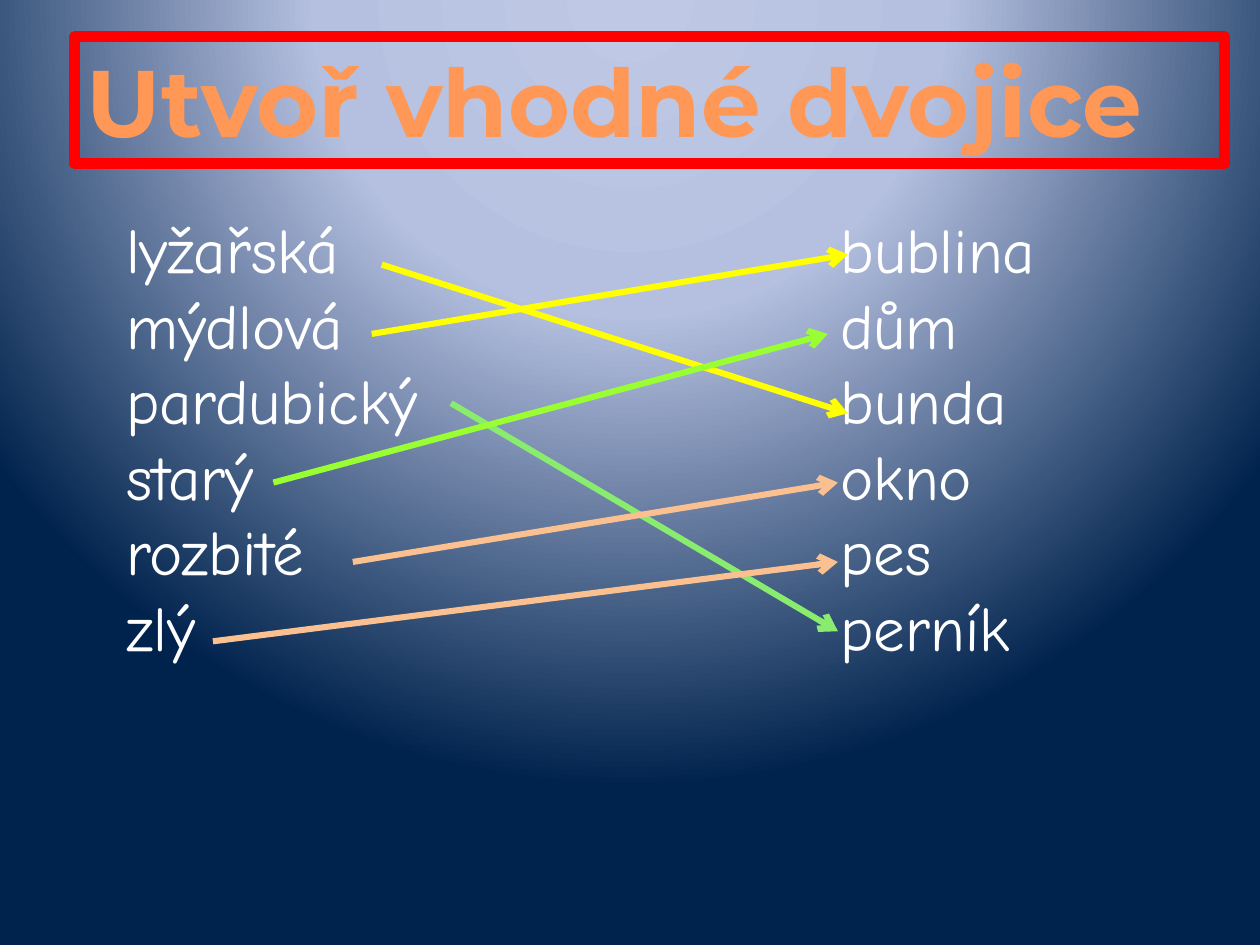
from lxml import etree
from pptx import Presentation
from pptx.dml.color import RGBColor as RGB
from pptx.enum.shapes import MSO_CONNECTOR as Conn
from pptx.enum.text import MSO_ANCHOR as Anchor, MSO_AUTO_SIZE as Fit, PP_ALIGN as Align
from pptx.oxml import parse_xml
from pptx.oxml.ns import nsdecls, qn
from pptx.util import Inches, Pt

# Content
TITLE = "Utvoř vhodné dvojice"
LEFT = ["lyžařská", "mýdlová", "pardubický", "starý", "rozbité", "zlý"]
RIGHT = ["bublina", "dům", "bunda", "okno", "pes", "perník"]
# Arrows: colour, start, end
ARROWS = [
    ("yellow", (3.03, 2.1), (6.73, 3.28)),
    ("yellow", (2.95, 2.65), (6.73, 2.02)),
    ("green", (3.58, 3.2), (6.65, 5.01)),
    ("lime", (2.17, 3.83), (6.57, 2.65)),
    ("peach", (2.8, 4.46), (6.65, 3.83)),
    ("peach", (1.69, 5.09), (6.65, 4.46)),
]
COLORS = {
    "title": "FF9856", "frame": "FF0000", "text": "FFFFFF",
    "yellow": "FFFF00", "green": "89EC6E", "lime": "99FF33", "peach": "FAC090",
}
GLOW = [(0, "BFC9E5"), (40, "B5C0E0"), (100, "00234D")]

# Layout
EDGE, TOP, ROW, PAD = 0.59, 1.62, 0.61, 0.31
COLS = [(LEFT, EDGE, 3.15), (RIGHT, 6.26, 2.83)]


def color(name):
    return RGB.from_string(COLORS[name])


def place(shape, *box):
    shape.left, shape.top, shape.width, shape.height = map(Inches, box)


def style(para, face, size, name, bold=False):
    font = para.font
    font.name, font.size, font.bold = face, Pt(size), bold
    font.color.rgb = color(name)
    para.alignment = Align.LEFT


def paint(slide):
    stops = "".join(
        f'<a:gs pos="{pos * 1000}"><a:srgbClr val="{tint}"/></a:gs>' for pos, tint in GLOW)
    slide.element.cSld.insert(0, parse_xml(
        f'<p:bg {nsdecls("p", "a")}><p:bgPr><a:gradFill rotWithShape="1">'
        f'<a:gsLst>{stops}</a:gsLst><a:path path="circle">'
        '<a:fillToRect l="50000" t="-80000" r="50000" b="180000"/></a:path>'
        '</a:gradFill><a:effectLst/></p:bgPr></p:bg>'))


def fill_list(body, words):
    frame = body.text_frame
    frame.text = "\n".join(words)
    frame.auto_size, frame.vertical_anchor = Fit.NONE, Anchor.TOP
    for para in frame.paragraphs:
        style(para, "Comic Neue", 36, "text")
        para.space_before = Pt(0)
        props = para._p.get_or_add_pPr()
        props.set("marL", str(Inches(PAD)))
        props.set("indent", "0")
        etree.SubElement(props, qn("a:buNone"))
        # Bullet settings come before the default run settings
        props.append(props.find(qn("a:defRPr")))


def arrow(slide, name, start, end):
    line = slide.shapes.add_connector(Conn.STRAIGHT, *map(Inches, start + end))
    line.line.color.rgb = color(name)
    line.line.width = Pt(3.5)
    etree.SubElement(line.line._get_or_add_ln(), qn("a:tailEnd"), type="arrow")
    etree.SubElement(line._element.spPr, qn("a:effectLst"))


def main():
    prs = Presentation()
    prs.slide_width, prs.slide_height = Inches(10), Inches(7.5)
    slide = prs.slides.add_slide(prs.slide_layouts.get_by_name("Two Content"))
    paint(slide)

    # Framed title
    title, *bodies = list(slide.placeholders)[:3]
    place(title, EDGE, 0.29, 9.13, 1.01)
    title.line.color.rgb = color("frame")
    title.line.width = Pt(6)
    title.text_frame.text = TITLE
    title.text_frame.auto_size = Fit.NONE
    style(title.text_frame.paragraphs[0], "Montserrat", 54, "title", True)

    # Word columns
    for body, (words, left, width) in zip(bodies, COLS):
        place(body, left, TOP, width, ROW * len(words) + 0.1)
        fill_list(body, words)

    # Matching pairs
    for item in ARROWS:
        arrow(slide, *item)

    prs.save("out.pptx")


if __name__ == "__main__":
    main()
